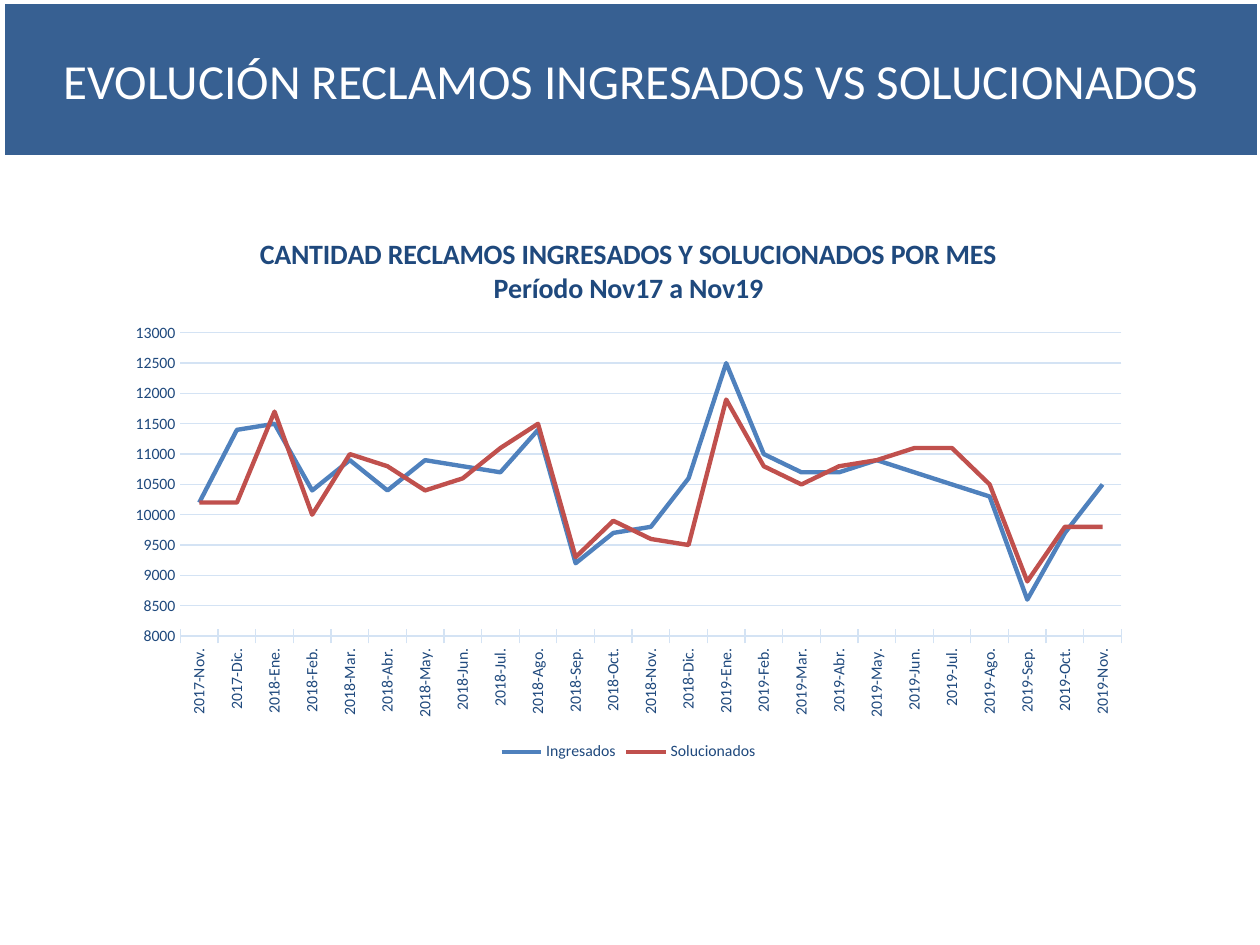
"""Build the slide comparing claims received and claims resolved by month."""
from pptx import Presentation
from pptx.chart.data import CategoryChartData
from pptx.dml.color import RGBColor
from pptx.enum.chart import XL_CHART_TYPE, XL_LEGEND_POSITION, XL_TICK_MARK
from pptx.enum.text import MSO_ANCHOR, MSO_AUTO_SIZE, PP_ALIGN
from pptx.util import Emu, Pt

PX = 914400 // 126
FONT = "Calibri"
WHITE = RGBColor(0xFF, 0xFF, 0xFF)
BANNER_BLUE = RGBColor(0x37, 0x60, 0x92)
TEXT_BLUE = RGBColor(0x1F, 0x49, 0x7D)
GRID_BLUE = RGBColor(0xD4, 0xE3, 0xF4)
RECEIVED_BLUE = RGBColor(0x4F, 0x81, 0xBD)
RESOLVED_RED = RGBColor(0xC0, 0x50, 0x4D)

BANNER_TITLE = "EVOLUCIÓN RECLAMOS INGRESADOS VS SOLUCIONADOS"
CHART_TITLE = ["CANTIDAD RECLAMOS INGRESADOS Y SOLUCIONADOS POR MES", "Período Nov17 a Nov19"]
BANNER_BOX = (1, 0, 1260, 159)
CHART_BOX = (115, 214, 1027, 552)

MONTHS = ["Ene", "Feb", "Mar", "Abr", "May", "Jun", "Jul", "Ago", "Sep", "Oct", "Nov", "Dic"]
FIRST_YEAR, FIRST_MONTH, MONTH_COUNT = 2017, 10, 25
SERIES = [
    ("Ingresados", RECEIVED_BLUE, [
        10200, 11400, 11500, 10400, 10900, 10400, 10900, 10800, 10700, 11400, 9200, 9700, 9800,
        10600, 12500, 11000, 10700, 10700, 10900, 10700, 10500, 10300, 8600, 9700, 10500]),
    ("Solucionados", RESOLVED_RED, [
        10200, 10200, 11700, 10000, 11000, 10800, 10400, 10600, 11100, 11500, 9300, 9900, 9600,
        9500, 11900, 10800, 10500, 10800, 10900, 11100, 11100, 10500, 8900, 9800, 9800]),
]


def to_emu(box):
    return [Emu(length * PX) for length in box]


def format_font(font, size, color, bold=False):
    font.name, font.size, font.bold = FONT, Pt(size), bold
    font.color.rgb = color


def write_text(text_frame, lines, size, color, bold=False):
    for index, line in enumerate(lines):
        paragraph = text_frame.add_paragraph() if index else text_frame.paragraphs[0]
        paragraph.alignment = PP_ALIGN.CENTER
        run = paragraph.add_run()
        run.text = line
        format_font(run.font, size, color, bold)


def format_line(line, color, width):
    line.color.rgb = color
    line.width = Pt(width)


def month_labels():
    positions = range(FIRST_MONTH, FIRST_MONTH + MONTH_COUNT)
    return [f"{FIRST_YEAR + position // 12}-{MONTHS[position % 12]}." for position in positions]


def add_claims_chart(slide):
    chart_data = CategoryChartData(number_format="###0")
    chart_data.categories = month_labels()
    for name, _, values in SERIES:
        chart_data.add_series(name, values)
    chart = slide.shapes.add_chart(XL_CHART_TYPE.LINE, *to_emu(CHART_BOX), chart_data).chart
    chart.font.name, chart.font.size = FONT, Pt(10)

    write_text(chart.chart_title.text_frame, CHART_TITLE, size=16, color=TEXT_BLUE, bold=True)
    chart.chart_title.include_in_layout = False
    chart.has_legend = True
    chart.legend.position = XL_LEGEND_POSITION.BOTTOM
    chart.legend.include_in_layout = False
    format_font(chart.legend.font, size=9, color=TEXT_BLUE)

    chart.plots[0].vary_by_categories = False
    for series, (_, color, _) in zip(chart.plots[0].series, SERIES):
        series.smooth = False
        format_line(series.format.line, color, 2.5)

    month_axis, count_axis = chart.category_axis, chart.value_axis
    for axis in (month_axis, count_axis):
        format_font(axis.tick_labels.font, size=9, color=TEXT_BLUE)
    month_axis.major_tick_mark = XL_TICK_MARK.CROSS
    format_line(month_axis.format.line, GRID_BLUE, 0.75)
    month_axis._element.txPr.bodyPr.set("rot", "-5400000")

    count_axis.minimum_scale, count_axis.maximum_scale = 8000, 13000
    count_axis.major_unit = 500
    count_axis.major_tick_mark = XL_TICK_MARK.NONE
    count_axis.format.line.fill.background()
    count_axis.tick_labels.number_format = "###0"
    count_axis.tick_labels.number_format_is_linked = False
    format_line(count_axis.major_gridlines.format.line, GRID_BLUE, 0.75)


def format_banner(banner):
    banner.left, banner.top, banner.width, banner.height = to_emu(BANNER_BOX)
    banner.fill.solid()
    banner.fill.fore_color.rgb = BANNER_BLUE
    format_line(banner.line, WHITE, 4.5)
    text_frame = banner.text_frame
    text_frame.auto_size = MSO_AUTO_SIZE.NONE
    text_frame.word_wrap = False
    text_frame.vertical_anchor = MSO_ANCHOR.MIDDLE
    write_text(text_frame, [BANNER_TITLE], size=28, color=WHITE)


def main():
    presentation = Presentation()
    presentation.slide_width, presentation.slide_height = to_emu((1260, 945))
    slide = presentation.slides.add_slide(presentation.slide_layouts[5])
    add_claims_chart(slide)
    format_banner(slide.shapes.title)
    presentation.save("out.pptx")


if __name__ == "__main__":
    main()
